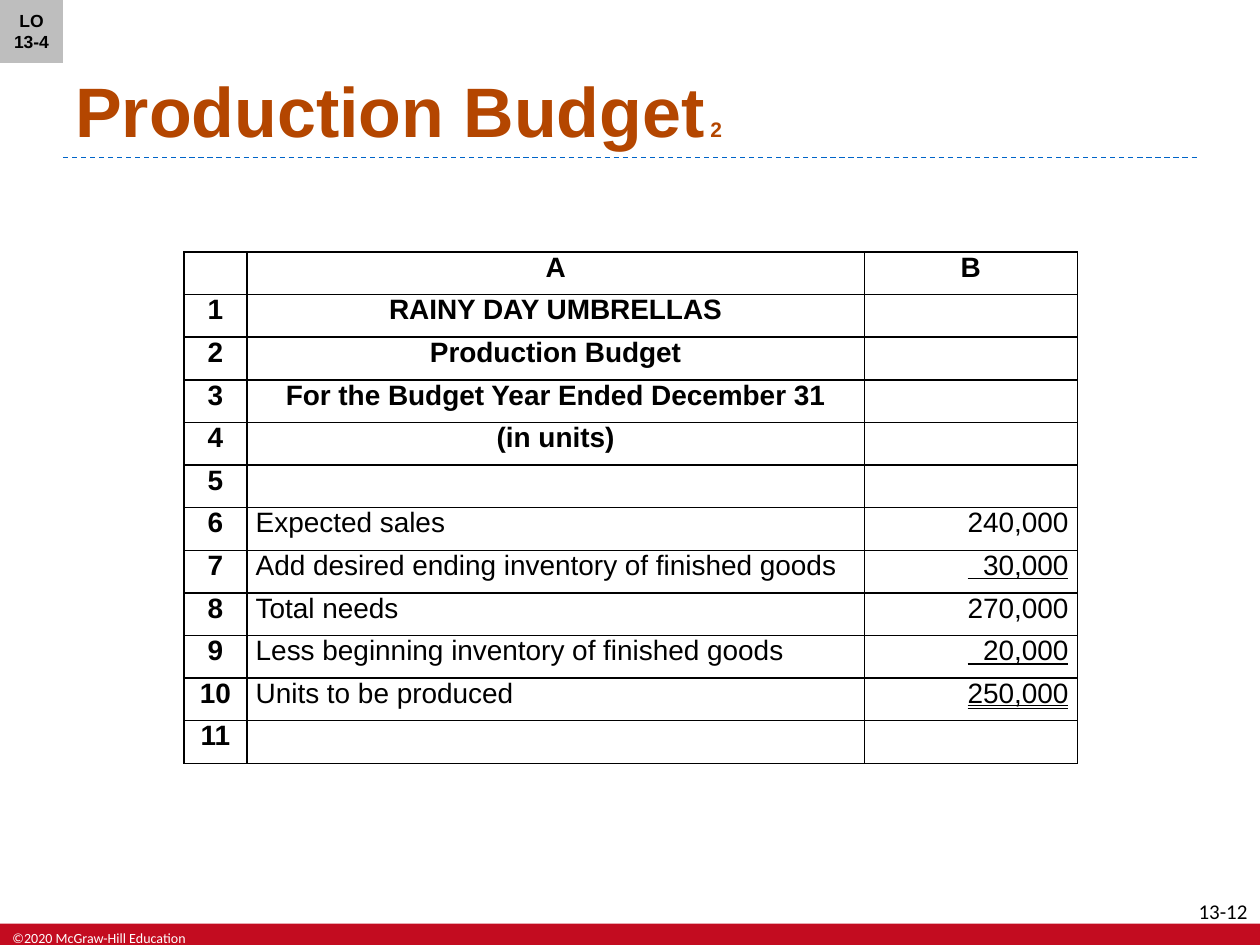
import pptx
import pptx.dml.color
import pptx.enum.dml
import pptx.enum.shapes
import pptx.enum.text
import pptx.oxml
import pptx.oxml.ns
import pptx.util

Inches = pptx.util.Inches
ALIGN = pptx.enum.text.PP_ALIGN
ANCHOR = pptx.enum.text.MSO_ANCHOR
UNDERLINE = pptx.enum.text.MSO_UNDERLINE
RECTANGLE = pptx.enum.shapes.MSO_SHAPE.RECTANGLE

COLORS = {
    "title": "B44600",
    "rule": "0064C8",
    "footer": "C30C20",
    "tag": "BEBEBE",
    "text": "000000",
    "white": "FFFFFF",
}

COLUMN_WIDTHS = [0.5, 4.9, 1.69]
HEADINGS = ["RAINY DAY UMBRELLAS", "Production Budget",
            "For the Budget Year Ended December 31", "(in units)"]
BUDGET_LINES = [
    ("Expected sales", " 240,000", None),
    ("Add desired ending inventory of finished goods", "  30,000", True),
    ("Total needs", "270,000", None),
    ("Less beginning inventory of finished goods", "  20,000", True),
    ("Units to be produced", "250,000", UNDERLINE.DOUBLE_LINE),
]


def rgb(name):
    return pptx.dml.color.RGBColor.from_string(COLORS[name])


def add_run(paragraph, text, size, color="text", bold=False, font="Arial", underline=None):
    run = paragraph.add_run()
    run.text = text
    run.font.name = font
    run.font.size = pptx.util.Pt(size)
    run.font.bold = bold
    run.font.underline = underline
    run.font.color.rgb = rgb(color)


def add_text_box(slide, left, top, width, height, anchor=ANCHOR.TOP, align=ALIGN.LEFT):
    """Add a wrapping text box and return its first paragraph."""
    box = slide.shapes.add_textbox(Inches(left), Inches(top), Inches(width), Inches(height))
    frame = box.text_frame
    frame.word_wrap = True
    frame.vertical_anchor = anchor
    frame.paragraphs[0].alignment = align
    return frame.paragraphs[0]


def add_block(slide, left, top, width, height, color):
    block = slide.shapes.add_shape(
        RECTANGLE, Inches(left), Inches(top), Inches(width), Inches(height))
    block.shadow.inherit = False
    block.fill.solid()
    block.fill.fore_color.rgb = rgb(color)
    block.line.fill.background()
    return block


def add_footer(slide, left, top, width, height):
    add_block(slide, left, top, width, height, "footer")
    copyright_line = add_text_box(slide, left, top, 1.6, height)
    add_run(copyright_line, "©2020 McGraw-Hill Education", 8, "white", font="Calibri")
    page = add_text_box(slide, left + width - 0.7, top - 0.25, 0.7, 0.2, align=ALIGN.RIGHT)
    add_run(page, "13-12", 12, font="Calibri")


def add_title(slide, left, top, width, height):
    # Dashed rule along the bottom edge
    bottom = Inches(top + height)
    rule = slide.shapes.add_connector(
        pptx.enum.shapes.MSO_CONNECTOR.STRAIGHT,
        Inches(left), bottom, Inches(left + width), bottom)
    rule.line.color.rgb = rgb("rule")
    rule.line.width = pptx.util.Pt(0.75)
    rule.line.dash_style = pptx.enum.dml.MSO_LINE.DASH
    rule._element.spPr.append(pptx.oxml.parse_xml(
        "<a:effectLst %s/>" % pptx.oxml.ns.nsdecls("a")))

    title = add_text_box(slide, left, top, width, height, anchor=ANCHOR.BOTTOM)
    add_run(title, "Production Budget", 40, "title", bold=True)
    add_run(title, " 2", 12, "title", bold=True)


def add_borders(cell):
    properties = cell._tc.get_or_add_tcPr()
    for position, side in enumerate(("lnL", "lnR", "lnT", "lnB")):
        properties.insert(position, pptx.oxml.parse_xml(
            '<a:%s %s w="12700"><a:solidFill><a:srgbClr val="%s"/></a:solidFill></a:%s>'
            % (side, pptx.oxml.ns.nsdecls("a"), COLORS["text"], side)))


def fill_cell(cell, text, align=ALIGN.CENTER, bold=True, underline=None):
    cell.margin_left = cell.margin_right = Inches(0.07)
    cell.margin_top = cell.margin_bottom = 0
    cell.fill.background()
    add_borders(cell)
    paragraph = cell.text_frame.paragraphs[0]
    paragraph.alignment = align
    paragraph.font.size = pptx.util.Pt(16)
    if text:
        add_run(paragraph, text, 16, bold=bold, underline=underline)


def add_budget_table(slide, left, top, width, height):
    # Heading rows, a spacer row, the budget lines and a closing empty row
    rows = [("A", "B", None)] + [(heading, "", None) for heading in HEADINGS]
    rows += [("", "", None)] + BUDGET_LINES + [("", "", None)]
    first_budget_row = len(HEADINGS) + 2

    table = slide.shapes.add_table(
        len(rows), len(COLUMN_WIDTHS),
        Inches(left), Inches(top), Inches(width), Inches(height)).table
    table.first_row = table.horz_banding = False
    for column, column_width in zip(table.columns, COLUMN_WIDTHS):
        column.width = Inches(column_width)

    for number, (label, amount, underline) in enumerate(rows):
        is_heading = number < first_budget_row
        fill_cell(table.cell(number, 0), str(number) if number else "")
        fill_cell(table.cell(number, 1), label,
                  ALIGN.CENTER if is_heading else ALIGN.LEFT, is_heading)
        fill_cell(table.cell(number, 2), amount,
                  ALIGN.CENTER if is_heading else ALIGN.RIGHT, is_heading, underline)


def add_objective_tag(slide, left, top, width, height):
    tag = add_block(slide, left, top, width, height, "tag")
    frame = tag.text_frame
    frame.word_wrap = True
    frame.vertical_anchor = ANCHOR.MIDDLE
    frame.paragraphs[0].alignment = ALIGN.CENTER
    add_run(frame.paragraphs[0], "LO 13-4", 10, bold=True)


def main():
    deck = pptx.Presentation()
    deck.slide_width, deck.slide_height = Inches(10), Inches(7.5)
    slide = deck.slides.add_slide(deck.slide_layouts[6])
    add_footer(slide, 0, 7.33, 10, 0.17)
    add_title(slide, 0.5, 0.05, 9, 1.2)
    add_budget_table(slide, 1.46, 2, sum(COLUMN_WIDTHS), 4.06)
    add_objective_tag(slide, 0, 0, 0.5, 0.5)
    deck.save("out.pptx")


if __name__ == "__main__":
    main()
